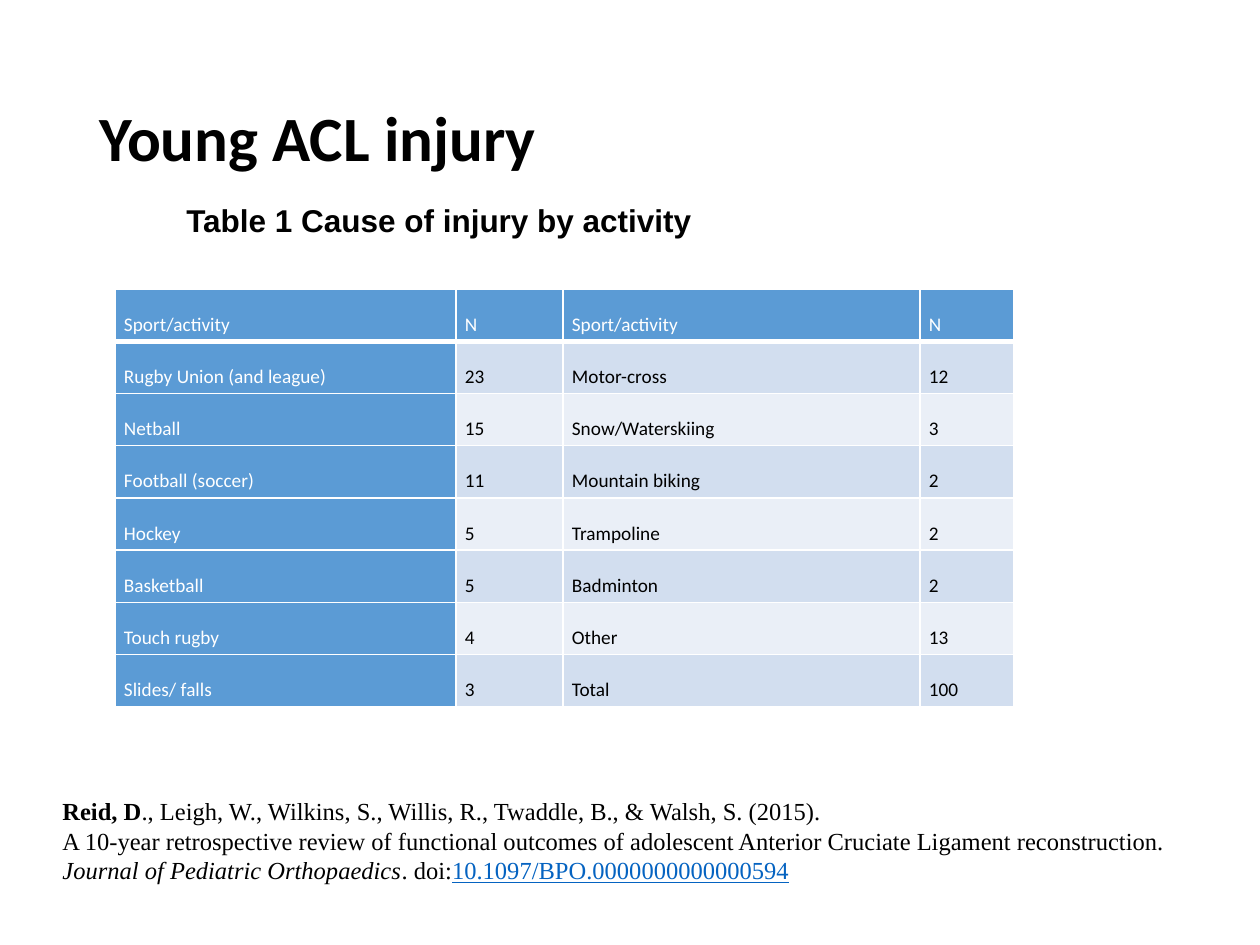
"""Build a slide with a table of injury causes by activity and its citation."""
import pptx
import pptx.dml.color
import pptx.enum.text
import pptx.oxml
import pptx.oxml.ns
import pptx.util

EMU_PER_PX = 914400 / 126
WHITE, BLACK, BLUE, LINK = "FFFFFF", "000000", "5B9BD5", "0563C1"
BANDS = ["D2DEEF", "EAEFF7"]
COLUMN_WIDTHS = [341, 107, 357, 94]
TABLE_HEIGHT = 418
ACTIVITIES = [
    ("Sport/activity", "N", "Sport/activity", "N"),
    ("Rugby Union (and league)", "23", "Motor-cross", "12"),
    ("Netball", "15", "Snow/Waterskiing", "3"),
    ("Football (soccer)", "11", "Mountain biking", "2"),
    ("Hockey", "5", "Trampoline", "2"),
    ("Basketball", "5", "Badminton", "2"),
    ("Touch rugby", "4", "Other", "13"),
    ("Slides/ falls", "3", "Total", "100"),
]
CITATION = [
    [("Reid, D", "bold"),
     ("., Leigh, W., Wilkins, S., Willis, R., Twaddle, B., & Walsh, S. (2015).", "")],
    [("A 10-year retrospective review of functional outcomes of adolescent "
      "Anterior Cruciate Ligament reconstruction.", "")],
    [("Journal of Pediatric Orthopaedics", "italic"), (". doi:", ""),
     ("10.1097/BPO.0000000000000594", "link")],
]


def px(length):
    return pptx.util.Emu(round(length * EMU_PER_PX))


def rgb(color):
    return pptx.dml.color.RGBColor.from_string(color)


def style_font(font, name, size, color=BLACK, bold=False):
    font.name, font.size, font.bold = name, pptx.util.Pt(size), bold
    font.color.rgb = rgb(color)


def add_text_frame(slide, left, top, width, height, wrap=True):
    frame = slide.shapes.add_textbox(px(left), px(top), px(width), px(height)).text_frame
    frame.word_wrap = wrap
    return frame


def add_heading(slide, bounds, text, font_name, size, anchor):
    frame = add_text_frame(slide, *bounds)
    frame.vertical_anchor = anchor
    heading = frame.paragraphs[0]
    heading.text = text
    style_font(heading.font, font_name, size, bold=True)
    return heading


def set_borders(cell, bottom_width):
    properties = cell._tc.get_or_add_tcPr()
    for side, width in zip("LRTB", (1, 1, 1, bottom_width)):
        properties.append(pptx.oxml.parse_xml(
            f'<a:ln{side} {pptx.oxml.ns.nsdecls("a")} w="{pptx.util.Pt(width)}">'
            f'<a:solidFill><a:srgbClr val="{WHITE}"/></a:solidFill></a:ln{side}>'))


def fill_cell(cell, text, row, column):
    is_header = row == 0 or column == 0
    set_borders(cell, 3 if row == 0 else 1)
    cell.fill.solid()
    cell.fill.fore_color.rgb = rgb(BLUE if is_header else BANDS[(row - 1) % 2])
    cell.margin_left = cell.margin_right = px(9)
    cell.margin_top = cell.margin_bottom = 0
    entry = cell.text_frame.paragraphs[0]
    entry.text = text
    entry.line_spacing = 2.0
    style_font(entry.font, "Calibri", 11, WHITE if is_header else BLACK)


def add_activity_table(slide, left, top):
    table = slide.shapes.add_table(
        len(ACTIVITIES), len(COLUMN_WIDTHS), px(left), px(top),
        px(sum(COLUMN_WIDTHS)), px(TABLE_HEIGHT)).table
    for column, width in zip(table.columns, COLUMN_WIDTHS):
        column.width = px(width)
    for row, activities in enumerate(ACTIVITIES):
        table.rows[row].height = px(TABLE_HEIGHT / len(ACTIVITIES))
        for column, text in enumerate(activities):
            fill_cell(table.cell(row, column), text, row, column)


def add_citation(slide, bounds):
    frame = add_text_frame(slide, *bounds, wrap=False)
    for index, parts in enumerate(CITATION):
        line = frame.add_paragraph() if index else frame.paragraphs[0]
        style_font(line.font, "Times New Roman", 14)
        for text, role in parts:
            part = line.add_run()
            part.text = text
            style_font(part.font, "Times New Roman", 14,
                       LINK if role == "link" else BLACK, role == "bold")
            part.font.italic = role == "italic"
            part.font.underline = role == "link"


def main():
    presentation = pptx.Presentation()
    presentation.slide_width, presentation.slide_height = px(1260), px(945)
    slide = presentation.slides.add_slide(presentation.slide_layouts[6])
    anchors = pptx.enum.text.MSO_ANCHOR
    title = add_heading(slide, (87, 50, 1086, 183), "Young ACL injury",
                        "Calibri", 36, anchors.MIDDLE)
    title.line_spacing = 0.9
    add_activity_table(slide, 115, 289)
    add_heading(slide, (174, 195, 1086, 89), "Table 1 Cause of injury by activity",
                "Arial", 18, anchors.TOP)
    add_citation(slide, (50, 790, 1143, 131))
    presentation.save("out.pptx")


if __name__ == "__main__":
    main()
